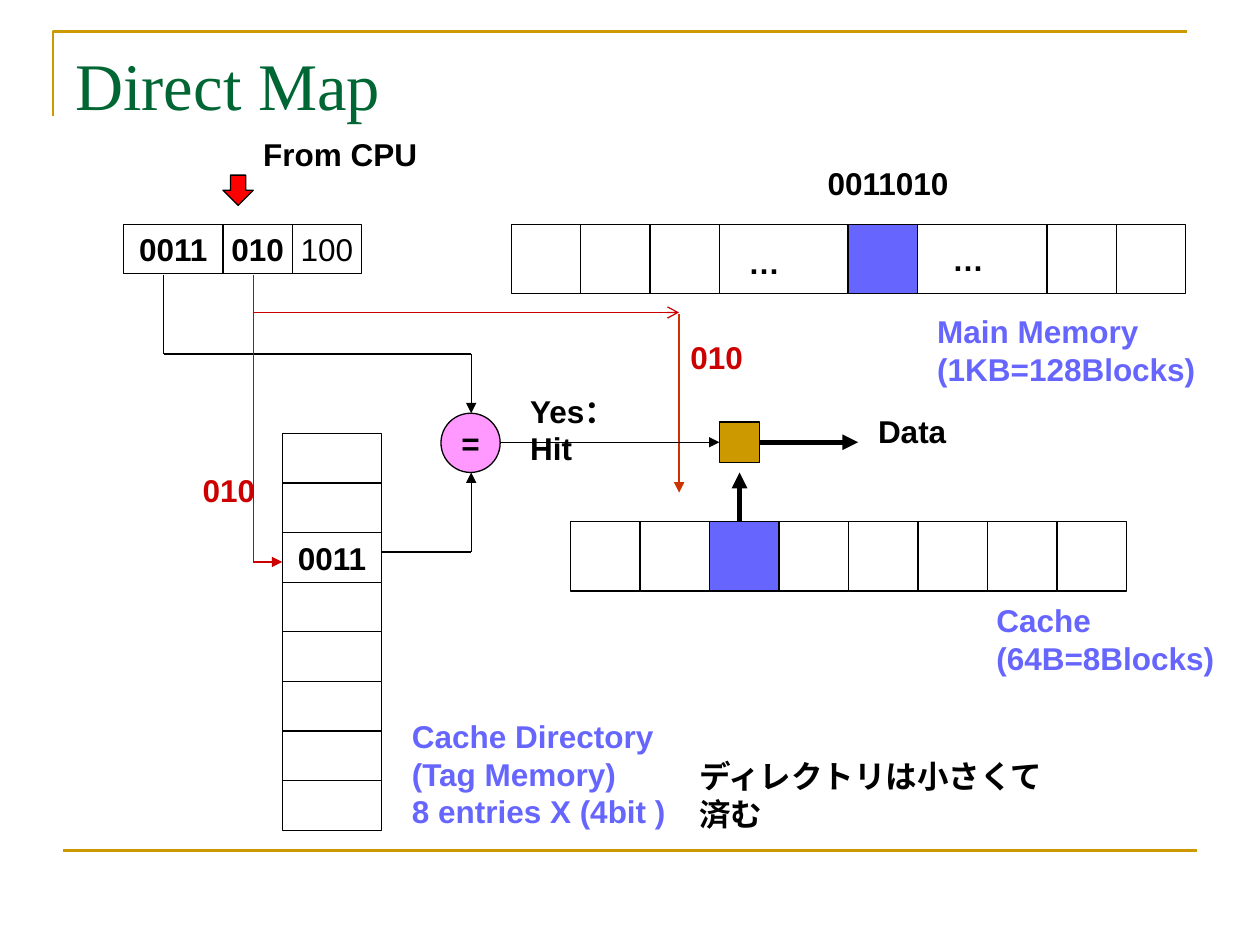
from dataclasses import dataclass
from typing import NamedTuple

from lxml import etree
from pptx import Presentation
from pptx.dml.color import RGBColor
from pptx.enum.shapes import MSO_CONNECTOR as Conn, MSO_SHAPE as Shape
from pptx.enum.text import MSO_ANCHOR as Anchor, PP_ALIGN as Align
from pptx.oxml.ns import qn
from pptx.util import Inches, Pt


@dataclass(frozen=True)
class Theme:
    black: str = "000000"
    white: str = "FFFFFF"
    gold: str = "CC9900"
    green: str = "006633"
    blue: str = "6666FF"
    pink: str = "FF99FF"
    red: str = "FF0000"
    index_red: str = "CC0000"
    select_red: str = "CC3300"
    heading_font: str = "Times New Roman"
    body_font: str = "Arial"
    title_size: float = 38
    body_size: float = 18
    thin: float = 0.75
    rule: float = 1.5
    thick: float = 3


T = Theme()


class Label(NamedTuple):
    text: str
    left: float
    top: float
    width: float
    height: float = 0.4
    color: str = T.black


class Wire(NamedTuple):
    """A run of straight segments; the head sits on the last one."""
    points: tuple
    color: str = T.black
    width: float = T.thin
    head: str = "triangle"


prs = Presentation()
prs.slide_width, prs.slide_height = Inches(10), Inches(7.5)
s = prs.slides.add_slide(prs.slide_layouts[6])


def write(tf, text: str, *, size=T.body_size, font=T.body_font, color=T.black,
          bold=True, align=Align.LEFT, anchor=Anchor.TOP, wrap=True) -> None:
    tf.word_wrap, tf.vertical_anchor = wrap, anchor
    for i, line in enumerate(text.split("\n")):
        p = tf.paragraphs[0] if i == 0 else tf.add_paragraph()
        p.alignment = align
        r = p.add_run()
        r.text = line
        r.font.size, r.font.name, r.font.bold = Pt(size), font, bold
        r.font.color.rgb = RGBColor.from_string(color)


def add_label(label: Label, **fmt) -> None:
    box = (Inches(v) for v in label[1:5])
    write(s.shapes.add_textbox(*box).text_frame, label.text, color=label.color, **fmt)


def set_line(line, color: str, width: float) -> None:
    line.color.rgb = RGBColor.from_string(color)
    line.width = Pt(width)


def add_box(left: float, top: float, width: float, height: float, *,
            kind=Shape.RECTANGLE, fill: str | None = T.white, text="", bold=True):
    sp = s.shapes.add_shape(kind, Inches(left), Inches(top), Inches(width), Inches(height))
    sp.shadow.inherit = False
    if fill:
        sp.fill.solid()
        sp.fill.fore_color.rgb = RGBColor.from_string(fill)
    else:
        sp.fill.background()
    set_line(sp.line, T.black, T.thin)
    if text:
        write(sp.text_frame, text, bold=bold, align=Align.CENTER,
              anchor=Anchor.MIDDLE, wrap=False)
    return sp


def add_wire(wire: Wire) -> list:
    segments = []
    for start, end in zip(wire.points, wire.points[1:]):
        cxn = s.shapes.add_connector(Conn.STRAIGHT, *(Inches(v) for v in start + end))
        set_line(cxn.line, wire.color, wire.width)
        etree.SubElement(cxn._element.spPr, qn("a:effectLst"))
        segments.append(cxn)
    if wire.head:
        ln = segments[-1].line._get_or_add_ln()
        etree.SubElement(ln, qn("a:tailEnd"), type=wire.head)
    return segments


# Frame rules and title
fb = s.shapes.build_freeform(Inches(0.42), Inches(0.92), scale=1.0)
fb.add_line_segments([(Inches(0.42), Inches(0.25)), (Inches(9.42), Inches(0.25))], close=False)
corner = fb.convert_to_shape()
corner.shadow.inherit = False
corner.fill.background()
set_line(corner.line, T.gold, T.rule)
add_wire(Wire(((0.5, 6.75), (9.5, 6.75)), T.gold, T.rule, ""))
add_label(Label("Direct Map", 0.5, 0.3, 9, 1.25, T.green),
          size=T.title_size, font=T.heading_font, bold=False)

# Address fields: tag, index, offset
ROW_TOP, FIELD_H = 1.78, 0.39
for field, left, width in (("0011", 0.98, 0.79), ("010", 1.77, 0.55), ("100", 2.32, 0.55)):
    add_box(left, ROW_TOP, width, FIELD_H, text=field, bold=field != "100")

# Main memory blocks, with an open span for the omitted ones
CELL = 0.55
for left in (4.06, 4.61, 5.16, 6.73, 8.31, 8.86):
    add_box(left, ROW_TOP, CELL, CELL, fill=T.blue if left == 6.73 else T.white)
add_box(5.71, ROW_TOP, 2.6, CELL, fill=None)

# Cache directory and cache, eight entries each; index 010 is entry 2
ENTRIES, HIT = 8, 2
TAG_PITCH, CACHE_PITCH = 3.15 / ENTRIES, 4.41 / ENTRIES
for i in range(ENTRIES):
    add_box(2.24, 3.44 + i * TAG_PITCH, 0.79, TAG_PITCH, text="0011" if i == HIT else "")
for i in range(ENTRIES):
    add_box(4.53 + i * CACHE_PITCH, 4.14, CACHE_PITCH, CELL,
            fill=T.blue if i == HIT else T.white)

# Comparator, data gate and input arrow
add_box(3.5, 3.28, 0.47, 0.47, kind=Shape.OVAL, fill=T.pink, text="=")
gate = add_box(5.71, 3.35, 0.32, 0.32, fill=T.gold)
add_box(1.77, 1.39, 0.24, 0.24, kind=Shape.DOWN_ARROW, fill=T.red)

# Wires
for wire in (
    Wire(((1.3, 2.18), (1.3, 2.81), (3.74, 2.81), (3.74, 3.28))),
    Wire(((3.03, 4.38), (3.74, 4.38), (3.74, 3.75))),
    Wire(((5.87, 4.14), (5.87, 3.75)), width=T.thick),
    Wire(((2.01, 2.18), (2.01, 4.46), (2.24, 4.46)), T.index_red),
    Wire(((2.01, 2.48), (5.39, 2.48)), T.index_red, head="arrow"),
    Wire(((5.39, 2.49), (5.39, 3.91)), T.select_red),
):
    add_wire(wire)
add_wire(Wire(((3.98, 3.51), (5.71, 3.51))))[0].end_connect(gate, 1)
add_wire(Wire(((6.03, 3.51), (6.81, 3.51)), width=T.thick))[0].begin_connect(gate, 3)

# Labels
for label in (
    Label("From CPU", 1.99, 1.02, 1.45),
    Label("0011010", 6.47, 1.25, 1.2),
    Label("…", 5.84, 1.88, 0.48),
    Label("…", 7.46, 1.86, 0.48),
    Label("Yes：Hit", 4.11, 3.06, 1.1),
    Label("Data", 6.87, 3.22, 0.78),
    Label("010", 1.51, 3.69, 0.65, color=T.index_red),
    Label("010", 5.38, 2.63, 0.65, color=T.index_red),
    Label("Main Memory\n(1KB=128Blocks)", 7.34, 2.43, 2.3, 1.01, T.blue),
    Label("Cache\n(64B=8Blocks)", 7.81, 4.72, 2, 0.71, T.blue),
    Label("Cache Directory\n(Tag Memory)\n8 entries X (4bit )", 3.17, 5.64, 2.25, 1.3, T.blue),
    Label("ディレクトリは小さくて済む", 5.45, 5.96, 2.95),
):
    add_label(label)

prs.save("out.pptx")
